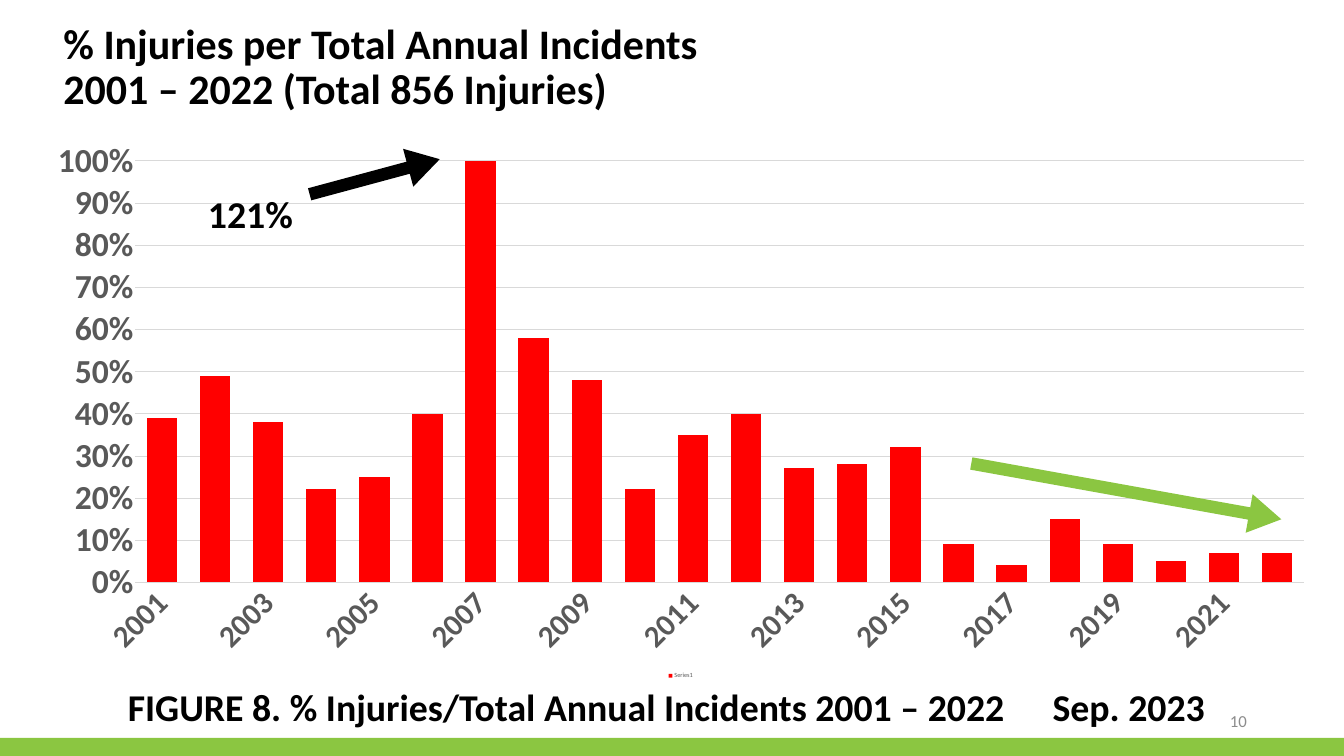
from pptx import Presentation
from pptx.chart.data import CategoryChartData
from pptx.dml.color import RGBColor
from pptx.enum import chart as ch, shapes, text
from pptx.oxml.ns import qn
from pptx.util import Pt
from lxml import etree

BLACK = RGBColor(0, 0, 0)
RED = RGBColor(0xFF, 0, 0)
GREEN = RGBColor(0x8B, 0xC6, 0x41)
GRID = RGBColor(0xD9, 0xD9, 0xD9)
AXIS_TEXT = RGBColor(0x59, 0x59, 0x59)
NUMBER_TEXT = RGBColor(0x8C, 0x8C, 0x8C)
FONT = "Calibri"
WIDTH, HEIGHT = 1920, 1080

TITLE = ["% Injuries per Total Annual Incidents", "2001 – 2022 (Total 856 Injuries)"]
CAPTION = ["FIGURE 8. % Injuries/Total Annual Incidents 2001 – 2022\tSep. 2023"]
PEAK = ["121%"]
PAGE = ["10"]
FIRST_YEAR = 2001
INJURY_RATES = [0.39, 0.49, 0.38, 0.22, 0.25, 0.4, 1.21, 0.58, 0.48, 0.22, 0.35,
                0.4, 0.27, 0.28, 0.32, 0.09, 0.04, 0.15, 0.09, 0.05, 0.07, 0.07]
ARROWS = [
    ((439, 224.5, 192.5, 56), 344.9, BLACK),
    ((1384, 674, 450, 56), 10.2, GREEN),
]


def style(font, size, color, bold=False):
    font.name, font.size, font.bold = FONT, Pt(size), bold
    font.color.rgb = color


def add_shape(slide, kind, box, color):
    shape = slide.shapes.add_shape(kind, *map(Pt, box))
    shape.shadow.inherit = False
    shape.fill.solid()
    shape.fill.fore_color.rgb = color
    shape.line.fill.background()
    return shape


def add_text(slide, box, lines, size, color=BLACK, bold=True, spacing=None, wrap=True):
    frame = slide.shapes.add_textbox(*map(Pt, box)).text_frame
    frame.word_wrap = wrap
    paragraph = frame.paragraphs[0]
    if spacing:
        paragraph.line_spacing = spacing
    for i, line in enumerate(lines):
        if i:
            paragraph.add_line_break()
        run = paragraph.add_run()
        run.text = line
        style(run.font, size, color, bold)
    return frame


def add_injury_chart(slide):
    data = CategoryChartData(number_format="0%")
    data.categories = [str(FIRST_YEAR + i) for i in range(len(INJURY_RATES))]
    data.add_series("Series1", INJURY_RATES)
    chart = slide.shapes.add_chart(ch.XL_CHART_TYPE.COLUMN_CLUSTERED,
                                   *map(Pt, (45.5, 184.5, 1854, 789)), data).chart
    style(chart.font, 10, BLACK)
    chart.has_title = False
    chart.has_legend = True
    chart.legend.position = ch.XL_LEGEND_POSITION.BOTTOM
    chart.legend.include_in_layout = False
    style(chart.legend.font, 9, AXIS_TEXT)

    plot = chart.plots[0]
    plot.gap_width, plot.overlap, plot.vary_by_categories = 75, -27, False
    bars = plot.series[0]
    bars.invert_if_negative = False
    bars.format.fill.solid()
    bars.format.fill.fore_color.rgb = RED

    years, rates = chart.category_axis, chart.value_axis
    for axis, size in ((years, 44), (rates, 48)):
        axis.major_tick_mark = axis.minor_tick_mark = ch.XL_TICK_MARK.NONE
        style(axis.tick_labels.font, size, AXIS_TEXT, True)
    rates.minimum_scale, rates.maximum_scale, rates.major_unit = 0, 1, 0.1
    rates.tick_labels.number_format = "0%"
    rates.tick_labels.number_format_is_linked = False
    rates.format.line.fill.background()
    for line in (years.format.line, rates.major_gridlines.format.line):
        line.color.rgb = GRID
        line.width = Pt(0.75)
    year_body = years.tick_labels.font._element.getparent().getparent().getparent().find(qn("a:bodyPr")) \
        if hasattr(years.tick_labels.font, "_element") else chart._chartSpace.find(
            ".//" + qn("c:catAx") + "/" + qn("c:txPr") + "/" + qn("a:bodyPr"))
    year_body.set("rot", "-2700000")
    year_body.set("vert", "horz")


def main():
    deck = Presentation()
    deck.slide_width, deck.slide_height = Pt(WIDTH), Pt(HEIGHT)
    slide = deck.slides.add_slide(deck.slide_layouts[6])

    add_shape(slide, shapes.MSO_SHAPE.RECTANGLE, (0, HEIGHT - 26, WIDTH, 26), GREEN)
    page = add_text(slide, (1356.5, 1001, 432, 57.5), PAGE, 24, NUMBER_TEXT, False)
    page.vertical_anchor = text.MSO_ANCHOR.MIDDLE
    page.paragraphs[0].alignment = text.PP_ALIGN.RIGHT

    caption = add_text(slide, (175.5, 980, 1585, 100), CAPTION, 54, spacing=0.9)
    properties = caption.paragraphs[0]._p.get_or_add_pPr()
    tabs = etree.SubElement(properties, qn("a:tabLst"))
    etree.SubElement(tabs, qn("a:tab"), pos=str(Pt(1321)), algn="l")

    add_injury_chart(slide)
    add_text(slide, (290, 268.5, 167, 73), PEAK, 54, wrap=False)
    for box, rotation, color in ARROWS:
        arrow = add_shape(slide, shapes.MSO_SHAPE.RIGHT_ARROW, box, color)
        arrow.adjustments[0], arrow.adjustments[1] = 0.318, 0.833
        arrow.rotation = rotation
    add_text(slide, (83.5, 29, 960.5, 138), TITLE, 60, spacing=0.9)

    deck.save("out.pptx")


if __name__ == "__main__":
    main()
